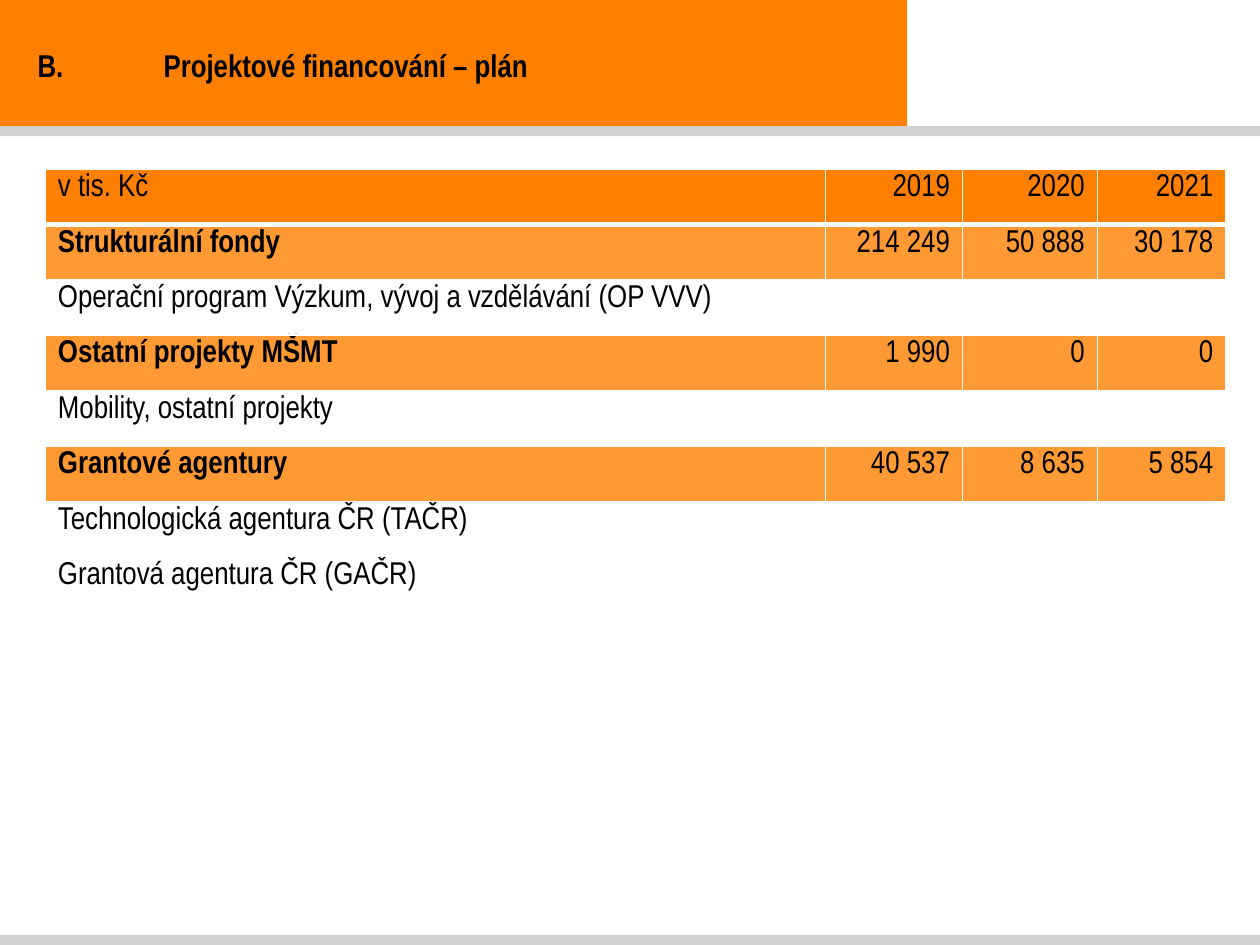
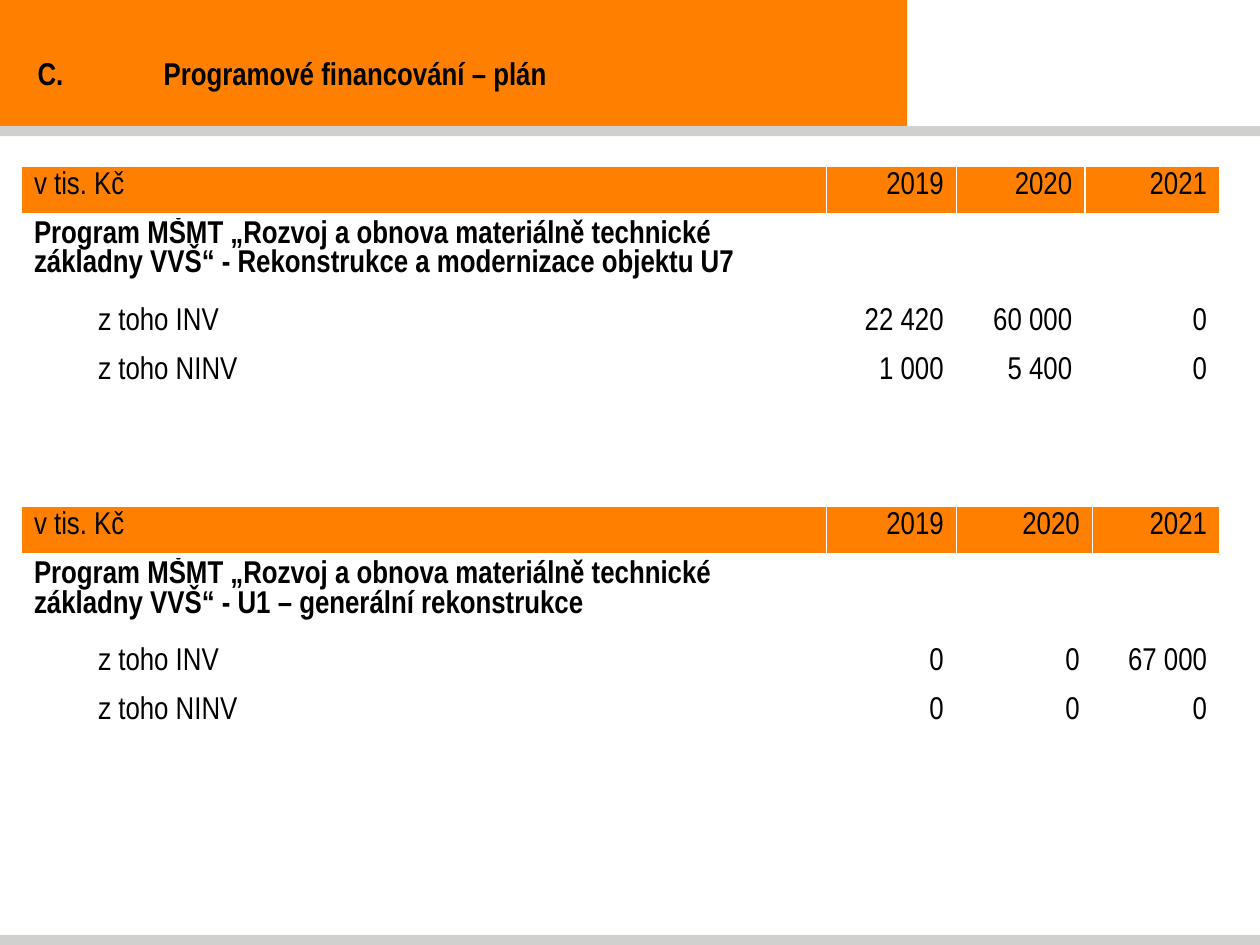
from dataclasses import dataclass

from lxml.etree import SubElement
from pptx import Presentation
from pptx.dml.color import RGBColor
from pptx.enum.shapes import MSO_SHAPE
from pptx.enum.text import MSO_ANCHOR, PP_ALIGN
from pptx.oxml.ns import qn
from pptx.util import Inches, Pt

ORANGE = "FF8001"
LIGHT_ORANGE = "FF9933"
GRAY = "D0D0CE"
WHITE = "FFFFFF"
BLACK = "000000"
FONT = "Arial Narrow"
BLANK_LAYOUT = 6
THIN, THICK = 1, 3


@dataclass(frozen=True)
class Band:
    left: float
    top: float
    width: float
    height: float
    color: str


@dataclass(frozen=True)
class Row:
    label: str
    values: tuple[str, ...] = ("", "", "")
    bold: bool = False
    fill: str = WHITE
    indent: float = 0


@dataclass(frozen=True)
class PlanTable:
    left: float
    top: float
    columns: tuple[float, ...]
    row_height: float
    rows: tuple[Row, ...]


@dataclass(frozen=True)
class PlanSlide:
    letter: str
    title: str
    title_height: float
    tables: tuple[PlanTable, ...]


# Bands shared by all slides
BANDS = (
    Band(0, 0, 7.2, 1, ORANGE),
    Band(0, 7.42, 10, 0.08, GRAY),
    Band(0, 1, 10, 0.08, GRAY),
)
HEADER = Row("v tis. Kč", ("2019", "2020", "2021"), fill=ORANGE)


def group_row(label: str, *values: str) -> Row:
    return Row(label, values, bold=True, fill=LIGHT_ORANGE)


def program_table(top: float, columns: tuple[float, ...], building: str,
                  investment: tuple[str, ...], other: tuple[str, ...]) -> PlanTable:
    program = f"Program MŠMT „Rozvoj a obnova materiálně technické základny VVŠ“ - {building}"
    return PlanTable(0.17, top, columns, 0.25, (
        HEADER,
        Row(program, bold=True),
        Row("z toho INV", investment, indent=0.51),
        Row("z toho NINV", other, indent=0.51),
    ))


SLIDES = (
    PlanSlide("B.", "Projektové financování – plán", 0.41, (
        PlanTable(0.36, 1.34, (6.19, 1.09, 1.07, 1.02), 0.44, (
            HEADER,
            group_row("Strukturální fondy", "214 249", "50 888", "30 178"),
            Row("Operační program Výzkum, vývoj a vzdělávání (OP VVV)"),
            group_row("Ostatní projekty MŠMT", "1 990", "0", "0"),
            Row("Mobility, ostatní projekty"),
            group_row("Grantové agentury", "40 537", "8 635", "5 854"),
            Row("Technologická agentura ČR (TAČR)"),
            Row("Grantová agentura ČR (GAČR)"),
        )),
    )),
    PlanSlide("C.", "Programové financování – plán", 0.54, (
        program_table(1.32, (6.39, 1.03, 1.02, 1.07),
                      "Rekonstrukce a modernizace objektu U7",
                      ("22 420", "60 000", "0"), ("1 000", "5 400", "0")),
        program_table(4.02, (6.39, 1.03, 1.08, 1.01),
                      "U1 – generální rekonstrukce",
                      ("0", "0", "67 000"), ("0", "0", "0")),
    )),
)


def rgb(color: str) -> RGBColor:
    return RGBColor.from_string(color)


def write_text(text_frame, text: str, *, bold: bool = False,
               align: PP_ALIGN = PP_ALIGN.LEFT, left: float = 0,
               first_line: float = 0) -> None:
    paragraph = text_frame.paragraphs[0]
    paragraph.alignment = align
    properties = paragraph._p.get_or_add_pPr()
    properties.set("marL", str(Inches(left)))
    properties.set("indent", str(Inches(first_line)))
    run = paragraph.add_run()
    run.text = text
    run.font.name = FONT
    run.font.size = Pt(18)
    run.font.bold = bold
    run.font.color.rgb = rgb(BLACK)


def draw_band(slide, band: Band) -> None:
    shape = slide.shapes.add_shape(
        MSO_SHAPE.RECTANGLE, Inches(band.left), Inches(band.top),
        Inches(band.width), Inches(band.height))
    shape.shadow.inherit = False
    shape.fill.solid()
    shape.fill.fore_color.rgb = rgb(band.color)
    shape.line.fill.background()


def draw_title(slide, plan: PlanSlide) -> None:
    title = slide.shapes.add_textbox(
        Inches(0), Inches(0.31), Inches(7.2), Inches(plan.title_height))
    title.text_frame.word_wrap = True
    title.text_frame.vertical_anchor = MSO_ANCHOR.MIDDLE
    # The hanging indent sets the gap between letter and title
    write_text(title.text_frame, f"{plan.letter}\t{plan.title}", bold=True,
               align=PP_ALIGN.JUSTIFY, left=1.2, first_line=-1)


def set_borders(cell, top: float, bottom: float) -> None:
    properties = cell._tc.get_or_add_tcPr()
    for side, width in (("L", THIN), ("R", THIN), ("T", top), ("B", bottom)):
        line = SubElement(properties, qn(f"a:ln{side}"), w=str(Pt(width)))
        fill = SubElement(line, qn("a:solidFill"))
        SubElement(fill, qn("a:srgbClr"), val=WHITE)


def draw_table(slide, plan: PlanTable) -> None:
    row_count = len(plan.rows)
    table = slide.shapes.add_table(
        row_count, len(plan.columns), Inches(plan.left), Inches(plan.top),
        Inches(sum(plan.columns)), Inches(plan.row_height * row_count)).table
    table.horz_banding = False
    for column, width in zip(table.columns, plan.columns):
        column.width = Inches(width)
    for row_index, row in enumerate(plan.rows):
        table.rows[row_index].height = Inches(plan.row_height)
        for column_index, text in enumerate((row.label, *row.values)):
            cell = table.cell(row_index, column_index)
            cell.margin_top = Inches(0.04)
            # The header is set off by a thick line below it
            set_borders(cell, top=THICK if row_index == 1 else THIN,
                        bottom=THICK if row_index == 0 else THIN)
            cell.fill.solid()
            cell.fill.fore_color.rgb = rgb(row.fill)
            if not text:
                continue
            is_label = column_index == 0
            write_text(cell.text_frame, text, bold=row.bold and is_label,
                       align=PP_ALIGN.LEFT if is_label else PP_ALIGN.RIGHT,
                       left=row.indent if is_label else 0)


def main() -> None:
    presentation = Presentation()
    presentation.slide_width = Inches(10)
    presentation.slide_height = Inches(7.5)
    for plan in SLIDES:
        slide = presentation.slides.add_slide(presentation.slide_layouts[BLANK_LAYOUT])
        for band in BANDS:
            draw_band(slide, band)
        draw_title(slide, plan)
        for table in plan.tables:
            draw_table(slide, table)
    presentation.save("out.pptx")


if __name__ == "__main__":
    main()
